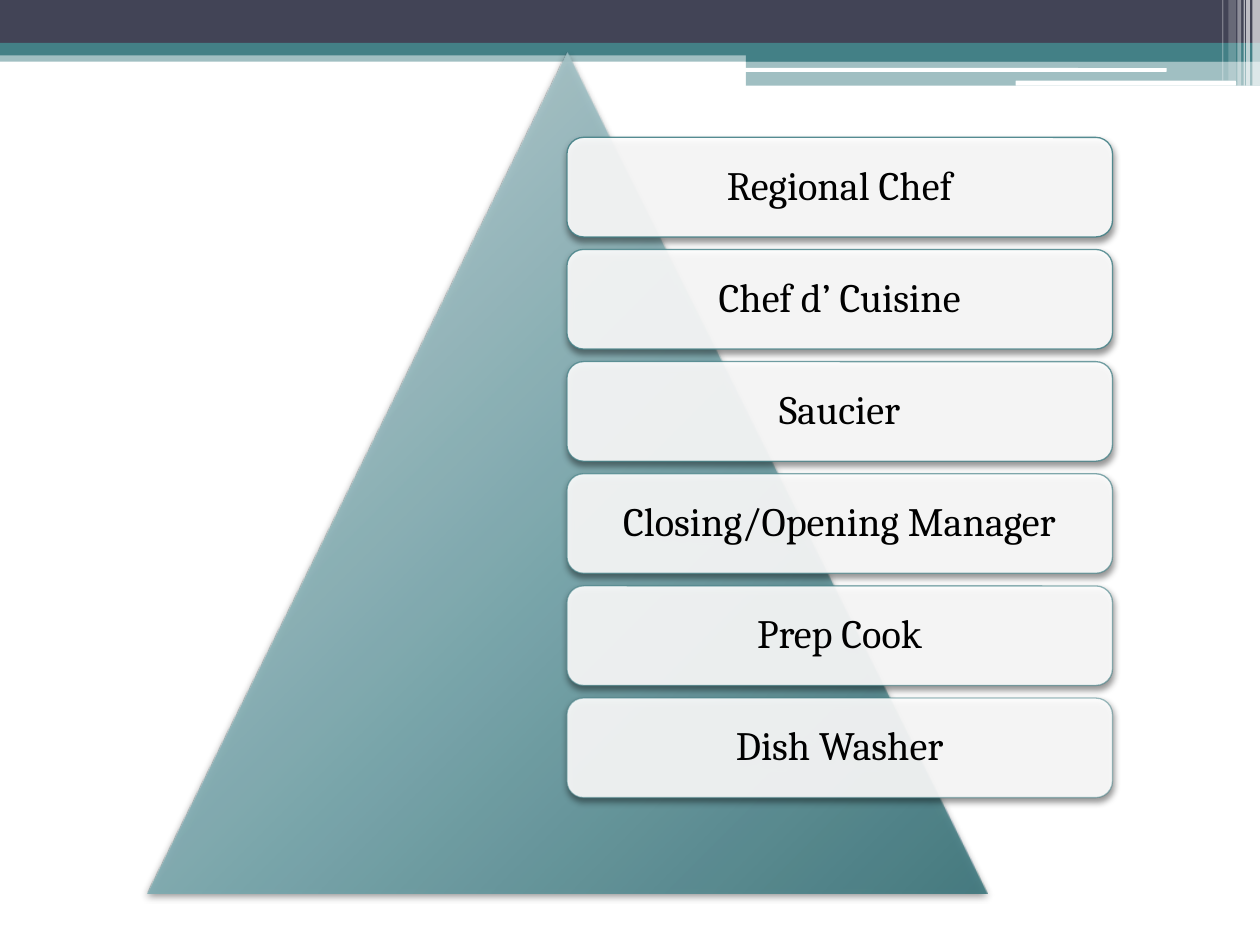
from dataclasses import dataclass

from lxml import etree
from pptx import Presentation
from pptx import util as u
from pptx.dml.color import RGBColor
from pptx.enum import shapes, text
from pptx.oxml import parse_xml
from pptx.oxml.ns import nsdecls, qn


@dataclass(frozen=True)
class Theme:
    navy: str = "424456"
    teal: str = "438086"
    white: str = "FFFFFF"
    black: str = "000000"
    font: str = "Cambria"
    size: int = 23
    grad: tuple = ((0, "C7D7DA"), (55, "77A7AD"), (100, "3E777D"))


THEME = Theme()
KIND = shapes.MSO_SHAPE


def fade(fill, alpha):
    if alpha < 100:
        color = fill._xPr.find(".//" + qn("a:srgbClr"))
        etree.SubElement(color, qn("a:alpha"), val=str(alpha * 1000))


def block(slide, kind, box, color, alpha=100):
    shape = slide.shapes.add_shape(kind, *map(u.Inches, box))
    shape.shadow.inherit = False
    shape.fill.solid()
    shape.fill.fore_color.rgb = RGBColor.from_string(color)
    fade(shape.fill, alpha)
    shape.line.fill.background()
    return shape


def shade(shape):
    effect = shape._element.spPr.find(qn("a:effectLst"))
    effect.append(parse_xml(
        f'<a:outerShdw {nsdecls("a")} blurRad="{u.Pt(4)}" dist="{u.Pt(2)}" '
        f'dir="5400000" rotWithShape="0"><a:srgbClr val="{THEME.black}">'
        '<a:alpha val="45000"/></a:srgbClr></a:outerShdw>'))


def write(shape, words, size=THEME.size, color=THEME.black, inset=0.14):
    frame = shape.text_frame
    frame.word_wrap = True
    frame.vertical_anchor = text.MSO_ANCHOR.MIDDLE
    frame.margin_left = frame.margin_right = u.Inches(inset)
    frame.margin_top = frame.margin_bottom = u.Inches(inset)
    para = frame.paragraphs[0]
    para.text = words
    para.alignment = text.PP_ALIGN.CENTER
    para.line_spacing = 0.9
    para.font.name = THEME.font
    para.font.size = u.Pt(size)
    para.font.color.rgb = RGBColor.from_string(color)


def banner(slide):
    bands = [
        ((0, 0.4, 10, 0.09), THEME.teal, 50),
        ((0, 0, 10, 0.34), THEME.navy, 100),
        ((0, 0.34, 10, 0.1), THEME.teal, 100),
        ((5.92, 0.39, 4.08, 0.1), THEME.teal, 100),
        ((5.92, 0.48, 4.08, 0.2), THEME.teal, 50),
    ]
    for box, color, alpha in bands:
        block(slide, KIND.RECTANGLE, box, color, alpha)
    for box in ((5.91, 0.54, 3.35, 0.03), (8.06, 0.64, 1.75, 0.04)):
        block(slide, KIND.ROUNDED_RECTANGLE, box, THEME.white)
    stripes = [
        (9.94, 0.06, 0.68, 65),
        (9.89, 0.03, 0.68, 65),
        (9.87, 0.01, 0.68, 60),
        (9.82, 0.03, 0.68, 40),
        (9.75, 0.06, 0.64, 20),
        (9.7, 0.01, 0.64, 30),
    ]
    for left, width, height, alpha in stripes:
        block(slide, KIND.RECTANGLE, (left, 0, width, height), THEME.white, alpha)


def pyramid(slide):
    shape = block(slide, KIND.ISOSCELES_TRIANGLE, (1.17, 0.42, 6.67, 6.67), THEME.teal)
    stops = "".join(
        f'<a:gs pos="{pos * 1000}"><a:srgbClr val="{color}">'
        '<a:alpha val="90000"/></a:srgbClr></a:gs>'
        for pos, color in THEME.grad)
    props = shape._element.spPr
    props.replace(props.find(qn("a:solidFill")), parse_xml(
        f'<a:gradFill {nsdecls("a")} rotWithShape="1"><a:gsLst>{stops}</a:gsLst>'
        '<a:path path="circle"><a:fillToRect l="-40000" t="-90000" '
        'r="140000" b="190000"/></a:path></a:gradFill>'))
    shade(shape)


def card(slide, words, top, alpha):
    shape = block(slide, KIND.ROUNDED_RECTANGLE, (4.5, top, 4.33, 0.79), THEME.white, 90)
    shape.line.color.rgb = RGBColor.from_string(THEME.teal)
    shape.line.width = u.Pt(0.75)
    fade(shape.line.fill, alpha)
    shade(shape)
    write(shape, words)


def main():
    deck = Presentation()
    deck.slide_width, deck.slide_height = u.Inches(10), u.Inches(7.5)
    slide = deck.slides.add_slide(deck.slide_layouts[6])
    banner(slide)
    pyramid(slide)
    roles = ("Regional Chef", "Chef d’ Cuisine", "Saucier",
             "Closing/Opening Manager", "Prep Cook", "Dish Washer")
    for row, role in enumerate(roles):
        card(slide, role, 1.09 + 0.89 * row, 90 - 8 * row)
    deck.save("out.pptx")


if __name__ == "__main__":
    main()
